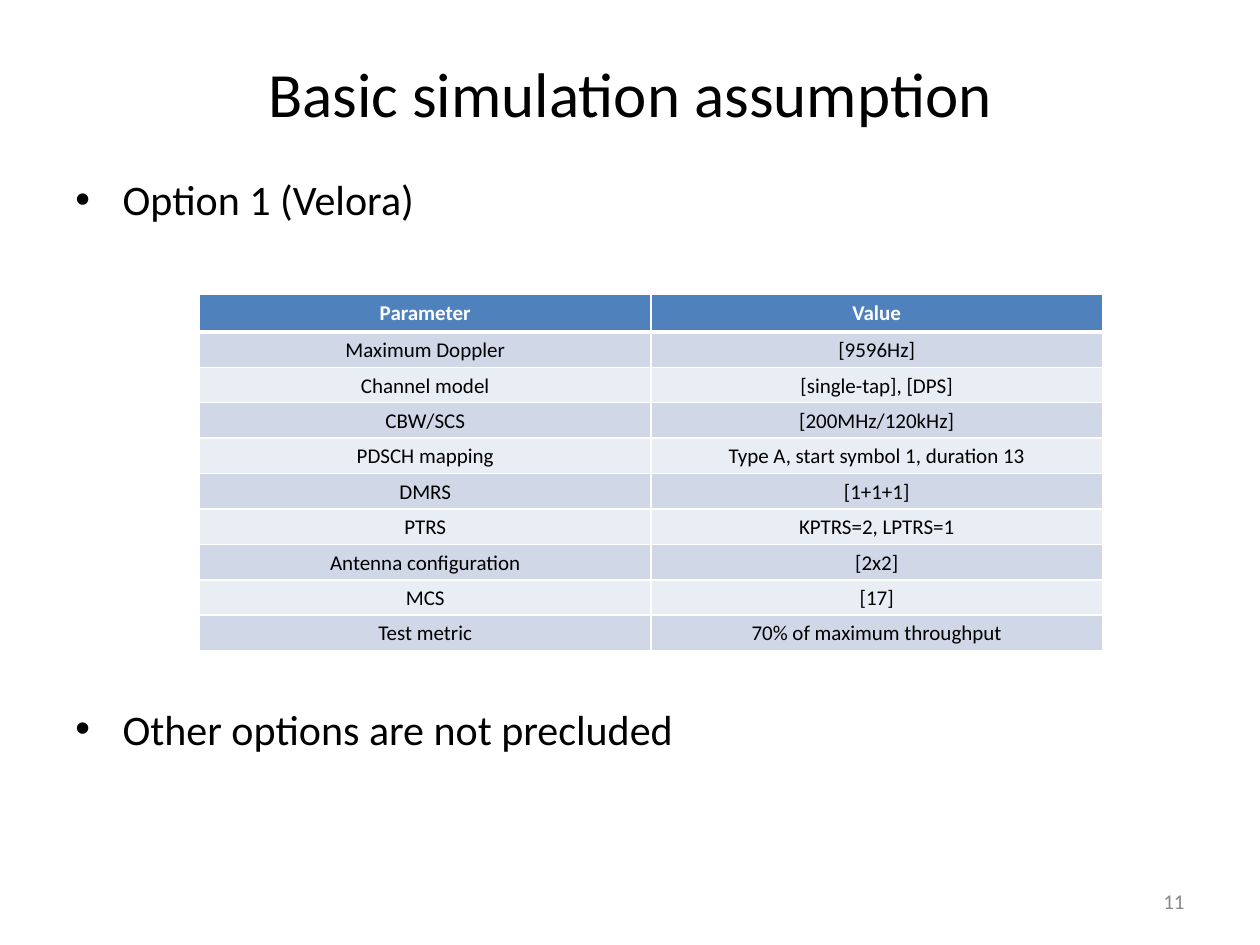
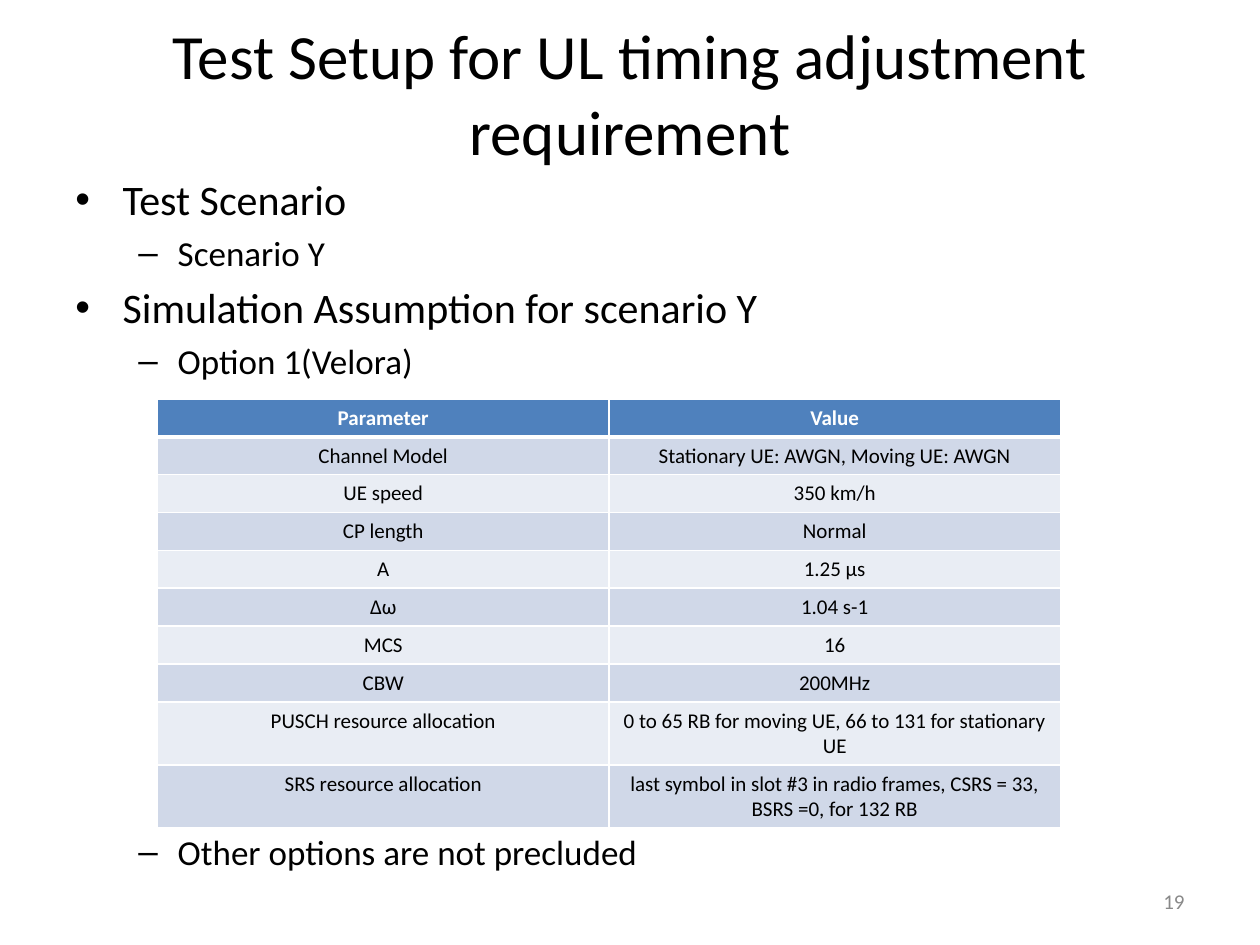
import pptx
import pptx.dml.color
import pptx.enum.text
import pptx.oxml.ns
import pptx.util
from lxml import etree

Pt = pptx.util.Pt
ALIGN = pptx.enum.text.PP_ALIGN
ANCHOR = pptx.enum.text.MSO_ANCHOR

COLORS = {
    "text": "000000",
    "number": "898989",
    "header": "4F81BD",
    "header text": "FFFFFF",
    "border": "FFFFFF",
    "odd row": "D0D8E8",
    "even row": "E9EDF4",
}
FONT = "Calibri"

# Bullet level: character, text size, left margin, hanging indent
LEVELS = [("•", 24, 27, -27), ("–", 20, 58.5, -22.5)]
BULLET_GAP = 4.4

TITLE_BOX = (36, 21.6, 648, 62.6)
BODY_BOX = (36, 95.8, 648, 386.6)
NUMBER_BOX = (516, 500.4, 168, 28.8)
COLUMN_WIDTH, ROW_HEIGHT = 258, 20.25

# Bullets: level, text, and the space before when a table stands above
SLIDES = [
    {
        "title": "Basic simulation assumption",
        "number": "11",
        "bullets": [
            (0, "Option 1 (Velora)", BULLET_GAP),
            (0, "Other options are not precluded", 273.6),
        ],
        "table at": (114, 168),
        "compact": True,
        "rows": [
            ("Parameter", "Value"),
            ("Maximum Doppler", "[9596Hz]"),
            ("Channel model", "[single-tap], [DPS]"),
            ("CBW/SCS", "[200MHz/120kHz]"),
            ("PDSCH mapping", "Type A, start symbol 1, duration 13"),
            ("DMRS", "[1+1+1]"),
            ("PTRS", "KPTRS=2, LPTRS=1"),
            ("Antenna configuration", "[2x2]"),
            ("MCS", "[17]"),
            ("Test metric", "70% of maximum throughput"),
        ],
    },
    {
        "title": "Test Setup for UL timing adjustment requirement",
        "number": "19",
        "bullets": [
            (0, "Test Scenario", BULLET_GAP),
            (1, "Scenario Y", BULLET_GAP),
            (0, "Simulation Assumption for scenario Y", BULLET_GAP),
            (1, "Option 1(Velora)", BULLET_GAP),
            (1, "Other options are not precluded", 256.2),
        ],
        "table at": (90, 228),
        "compact": False,
        "rows": [
            ("Parameter", "Value"),
            ("Channel Model", "Stationary UE: AWGN, Moving UE: AWGN"),
            ("UE speed", "350 km/h"),
            ("CP length", "Normal"),
            ("A", "1.25 μs"),
            ("Δω", "1.04 s-1"),
            ("MCS", "16"),
            ("CBW", "200MHz"),
            ("PUSCH resource allocation", "0 to 65 RB for moving UE, 66 to 131 for stationary UE"),
            ("SRS resource allocation", "last symbol in slot #3 in radio frames, CSRS = 33, BSRS =0, for 132 RB"),
        ],
    },
]


def rgb(name):
    return pptx.dml.color.RGBColor.from_string(COLORS[name])


def add_element(parent, tag, **attributes):
    return etree.SubElement(parent, pptx.oxml.ns.qn(tag), attributes)


def style(paragraph, size, color="text", align=ALIGN.LEFT, bold=False):
    paragraph.alignment = align
    font = paragraph.font
    font.name, font.size, font.bold = FONT, Pt(size), bold
    font.color.rgb = rgb(color)


def add_frame(slide, box, anchor=ANCHOR.MIDDLE):
    frame = slide.shapes.add_textbox(*map(Pt, box)).text_frame
    frame.word_wrap = True
    frame.vertical_anchor = anchor
    return frame


def add_line(slide, box, text, size, color, align):
    paragraph = add_frame(slide, box).paragraphs[0]
    paragraph.text = text
    style(paragraph, size, color, align)


def add_bullets(slide, bullets):
    frame = add_frame(slide, BODY_BOX, ANCHOR.TOP)
    for index, (level, text, gap) in enumerate(bullets):
        paragraph = frame.add_paragraph() if index else frame.paragraphs[0]
        character, size, margin, indent = LEVELS[level]
        paragraph.text = text
        paragraph.level = level
        paragraph.space_before = Pt(gap)
        properties = paragraph._p.get_or_add_pPr()
        properties.set("marL", str(Pt(margin)))
        properties.set("indent", str(Pt(indent)))
        add_element(properties, "a:buFont", typeface="Arial")
        add_element(properties, "a:buChar", char=character)
        style(paragraph, size)


def add_borders(cell, row):
    """White rules around the cell, heavier between header and body."""
    widths = {"L": 1, "R": 1, "T": 3 if row == 1 else 1, "B": 3 if row == 0 else 1}
    properties = cell._tc.get_or_add_tcPr()
    for side, width in widths.items():
        line = add_element(properties, f"a:ln{side}", w=str(Pt(width)))
        fill = add_element(line, "a:solidFill")
        add_element(fill, "a:srgbClr", val=COLORS["border"])


def add_parameter_table(slide, position, rows, compact):
    columns = len(rows[0])
    left, top = position
    table = slide.shapes.add_table(
        len(rows), columns, Pt(left), Pt(top),
        Pt(COLUMN_WIDTH * columns), Pt(ROW_HEIGHT * len(rows)),
    ).table
    for row, texts in enumerate(rows):
        table.rows[row].height = Pt(ROW_HEIGHT)
        is_header = row == 0
        fill = "header" if is_header else "odd row" if row % 2 else "even row"
        for column, text in enumerate(texts):
            cell = table.cell(row, column)
            add_borders(cell, row)
            cell.fill.solid()
            cell.fill.fore_color.rgb = rgb(fill)
            cell.text = text
            paragraph = cell.text_frame.paragraphs[0]
            if compact and not is_header:
                cell.vertical_anchor = ANCHOR.MIDDLE
                cell.margin_left = cell.margin_right = Pt(5)
                cell.margin_top = cell.margin_bottom = Pt(0)
                paragraph.line_spacing = 1.07
            style(paragraph, 12, "header text" if is_header else "text", ALIGN.CENTER, is_header)


def main():
    presentation = pptx.Presentation()
    presentation.slide_width, presentation.slide_height = Pt(720), Pt(540)
    for content in SLIDES:
        slide = presentation.slides.add_slide(presentation.slide_layouts[6])
        add_line(slide, TITLE_BOX, content["title"], 36, "text", ALIGN.CENTER)
        add_bullets(slide, content["bullets"])
        add_line(slide, NUMBER_BOX, content["number"], 12, "number", ALIGN.RIGHT)
        add_parameter_table(slide, content["table at"], content["rows"], content["compact"])
    presentation.save("out.pptx")


if __name__ == "__main__":
    main()
